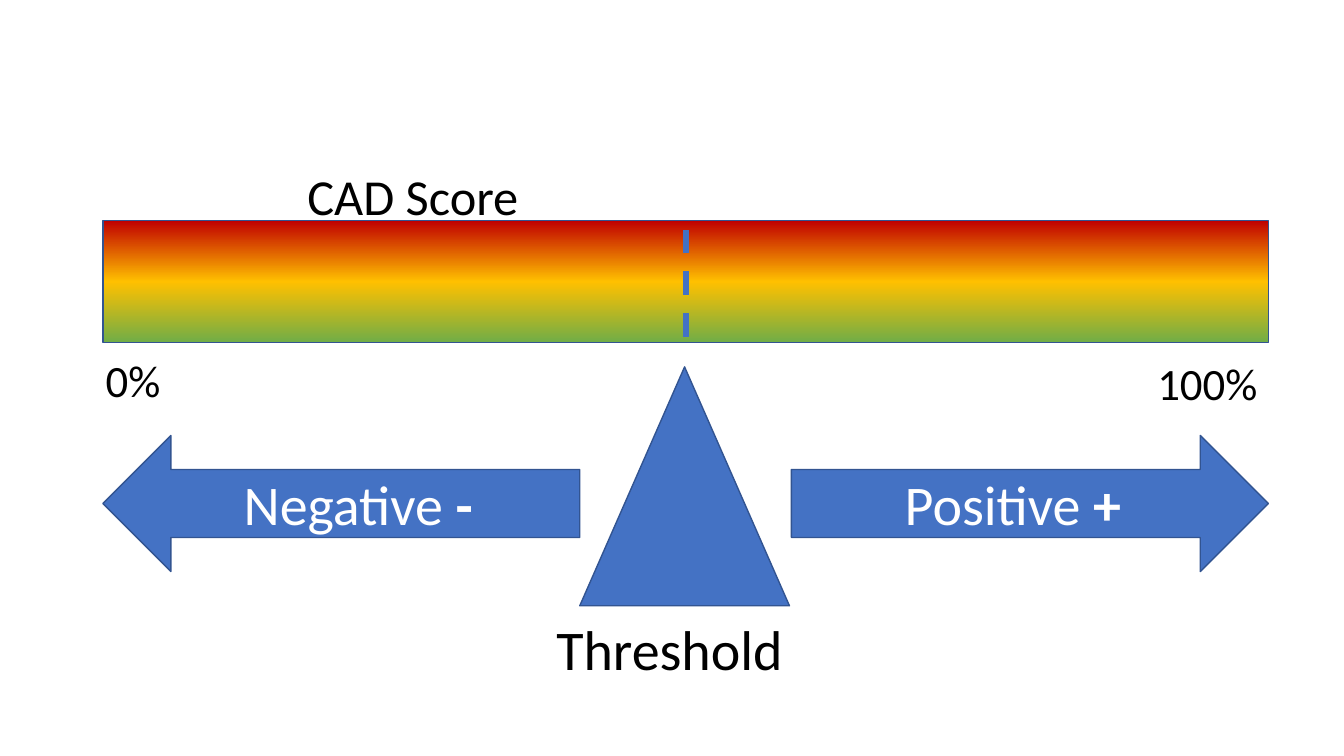
from copy import deepcopy
from dataclasses import dataclass

from lxml.etree import SubElement
from pptx import Presentation
from pptx.dml.color import RGBColor
from pptx.enum.dml import MSO_LINE
from pptx.enum.shapes import MSO_CONNECTOR, MSO_SHAPE as Preset
from pptx.enum.text import MSO_ANCHOR, MSO_AUTO_SIZE, PP_ALIGN
from pptx.oxml.ns import qn
from pptx.shapes.autoshape import Shape
from pptx.slide import Slide
from pptx.text.text import TextFrame
from pptx.util import Inches, Pt


@dataclass(frozen=True)
class Theme:
    font: str = "Calibri"
    blue: str = "4472C4"
    outline: str = "325491"
    black: str = "000000"
    white: str = "FFFFFF"
    scale: tuple[str, ...] = ("70AD47", "FFC000", "C00000")
    end_size: int = 32
    title_size: int = 36
    big_size: int = 40


@dataclass(frozen=True)
class Area:
    left: float
    top: float
    width: float
    height: float

    def lengths(self) -> list[int]:
        return [Inches(n) for n in (self.left, self.top, self.width, self.height)]


@dataclass(frozen=True)
class Label:
    text: str
    area: Area
    size: int
    wrap: bool = True


@dataclass(frozen=True)
class Block:
    preset: Preset
    area: Area
    word: str = ""
    sign: str = ""


THEME = Theme()
BAR = Area(1.02, 2.19, 11.56, 1.21)
ARROW_WIDTH, ARROW_HEIGHT, ARROW_TOP = 4.73, 1.35, 4.32
MIDDLE = BAR.left + BAR.width / 2

BLOCKS = [
    Block(Preset.ISOSCELES_TRIANGLE, Area(5.75, 3.64, 2.08, 2.37)),
    Block(Preset.RIGHT_ARROW,
          Area(BAR.left + BAR.width - ARROW_WIDTH, ARROW_TOP, ARROW_WIDTH, ARROW_HEIGHT),
          "Positive", " +"),
    Block(Preset.LEFT_ARROW,
          Area(BAR.left, ARROW_TOP, ARROW_WIDTH, ARROW_HEIGHT),
          "Negative ", "-"),
]
LABELS = [
    Label("100%", Area(11.38, 3.48, 1.21, 0.64), THEME.end_size, wrap=False),
    Label("0%", Area(0.95, 3.45, 0.75, 0.64), THEME.end_size, wrap=False),
    Label("Threshold", Area(5.42, 6.05, 2.74, 0.77), THEME.big_size),
    Label("CAD Score", Area(2.95, 1.59, 6.46, 0.71), THEME.title_size),
]


def rgb(value: str) -> RGBColor:
    return RGBColor.from_string(value)


def add_span(frame: TextFrame, text: str, size: int, color: str, bold: bool = False) -> None:
    span = frame.paragraphs[0].add_run()
    span.text = text
    for name, value in {"name": THEME.font, "size": Pt(size), "bold": bold}.items():
        setattr(span.font, name, value)
    span.font.color.rgb = rgb(color)


def add_outlined(page: Slide, preset: Preset, area: Area) -> Shape:
    shape = page.shapes.add_shape(preset, *area.lengths())
    shape.shadow.inherit = False
    shape.line.color.rgb = rgb(THEME.outline)
    shape.line.width = Pt(1)
    return shape


def add_score_bar(page: Slide) -> None:
    """Draw the bar with a gradient that runs upward through the scale colours."""
    fill = add_outlined(page, Preset.RECTANGLE, BAR).fill
    fill.gradient()
    fill.gradient_angle = 90
    first = fill.gradient_stops[0]._gs
    first.addnext(deepcopy(first))
    steps = len(THEME.scale) - 1
    for index, (stop, color) in enumerate(zip(fill.gradient_stops, THEME.scale)):
        stop.position = index / steps
        stop.color.rgb = rgb(color)


def add_block(page: Slide, block: Block) -> None:
    shape = add_outlined(page, block.preset, block.area)
    shape.fill.solid()
    shape.fill.fore_color.rgb = rgb(THEME.blue)
    if block.word:
        frame = shape.text_frame
        frame.vertical_anchor = MSO_ANCHOR.MIDDLE
        frame.paragraphs[0].alignment = PP_ALIGN.CENTER
        add_span(frame, block.word, THEME.big_size, THEME.white)
        add_span(frame, block.sign, THEME.big_size, THEME.white, bold=True)


def add_threshold_line(page: Slide) -> None:
    ends = [Inches(n) for n in (MIDDLE, 3.34, MIDDLE, 2.14)]
    mark = page.shapes.add_connector(MSO_CONNECTOR.STRAIGHT, *ends)
    mark.line.color.rgb = rgb(THEME.blue)
    for name, value in {"width": Pt(4.25), "dash_style": MSO_LINE.DASH}.items():
        setattr(mark.line, name, value)
    SubElement(mark._element.spPr, qn("a:effectLst"))


def add_label(page: Slide, label: Label) -> None:
    frame = page.shapes.add_textbox(*label.area.lengths()).text_frame
    frame.word_wrap = label.wrap
    frame.auto_size = MSO_AUTO_SIZE.SHAPE_TO_FIT_TEXT
    add_span(frame, label.text, label.size, THEME.black)


def main() -> None:
    deck = Presentation()
    deck.slide_width, deck.slide_height = Inches(13.33), Inches(7.5)
    page = deck.slides.add_slide(deck.slide_layouts[6])
    add_score_bar(page)
    for block in BLOCKS:
        add_block(page, block)
    add_threshold_line(page)
    for label in LABELS:
        add_label(page, label)
    deck.save("out.pptx")


if __name__ == "__main__":
    main()
